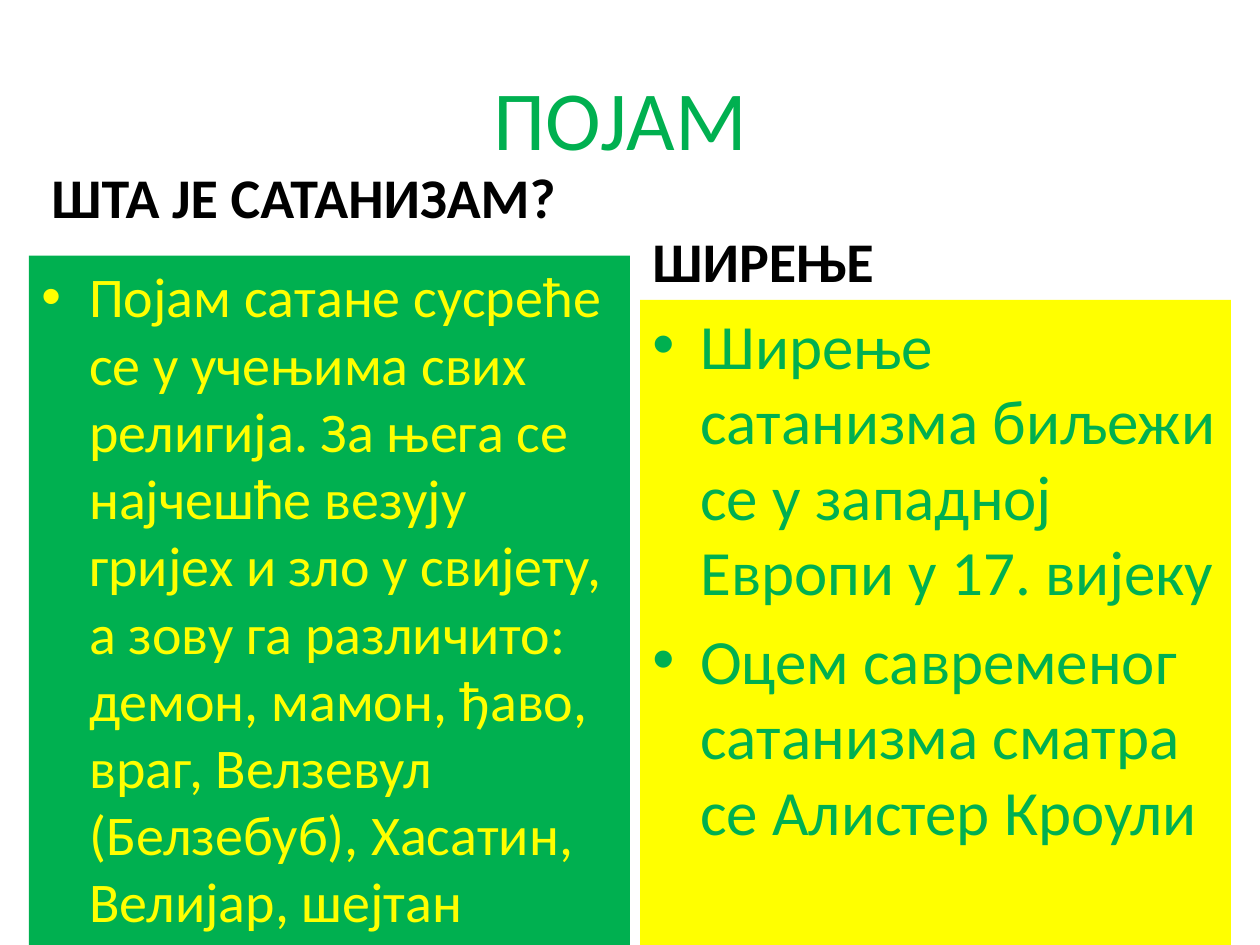
from dataclasses import dataclass
from lxml.etree import SubElement
from pptx import Presentation as Deck
from pptx.dml.color import RGBColor as Color
from pptx.enum.shapes import MSO_SHAPE as Form
from pptx.enum.text import MSO_ANCHOR as Anchor, PP_ALIGN as Align
from pptx.oxml.ns import qn
from pptx.util import Inches, Pt


@dataclass(frozen=True)
class Theme:
    font: str = "Calibri"
    green: str = "00B050"
    gold: str = "FFFF00"
    ink: str = "000000"
    title: int = 48
    body: int = 32
    large: int = 36
    gap: float = 0.2
    indent: float = 0.38


class Page:
    def __init__(self, slide, theme):
        self.slide = slide
        self.theme = theme

    def label(self, frame, lines, size, tint, bold=False, align=Align.LEFT):
        frame.word_wrap = True
        for i, line in enumerate(lines):
            para = frame.add_paragraph() if i else frame.paragraphs[0]
            para.text = line
            para.alignment = align
            para.space_before = Pt(size * self.theme.gap)
            font = para.font
            font.name, font.size, font.bold = self.theme.font, Pt(size), bold
            font.color.rgb = Color.from_string(tint)

    def title(self, text, box):
        frame = self.slide.shapes.add_textbox(*map(Inches, box)).text_frame
        frame.vertical_anchor = Anchor.MIDDLE
        self.label(frame, [text], self.theme.title, self.theme.green, align=Align.CENTER)
        frame.paragraphs[0].space_before = Pt(0)

    def head(self, text, box):
        frame = self.slide.shapes.add_textbox(*map(Inches, box)).text_frame
        frame.vertical_anchor = Anchor.BOTTOM
        self.label(frame, [text], self.theme.body, self.theme.ink, bold=True)

    def panel(self, lines, box, fill, tint, size):
        shape = self.slide.shapes.add_shape(Form.RECTANGLE, *map(Inches, box))
        shape.shadow.inherit = False
        shape.fill.solid()
        shape.fill.fore_color.rgb = Color.from_string(fill)
        shape.line.fill.background()
        frame = shape.text_frame
        frame.vertical_anchor = Anchor.TOP
        self.label(frame, lines, size, tint)
        for para in frame.paragraphs:
            self.bullet(para)

    def bullet(self, para):
        props = para._p.get_or_add_pPr()
        step = Inches(self.theme.indent)
        props.set("marL", str(step))
        props.set("indent", str(-step))
        SubElement(props, qn("a:buFont")).set("typeface", "Arial")
        SubElement(props, qn("a:buChar")).set("char", "•")
        props.append(props.find(qn("a:defRPr")))


def main():
    deck = Deck()
    deck.slide_width, deck.slide_height = Inches(10), Inches(7.5)
    theme = Theme()
    page = Page(deck.slides.add_slide(deck.slide_layouts[6]), theme)

    page.title("ПОЈАМ ", (0.5, 0.3, 9, 1.25))
    page.head("ШТА ЈЕ САТАНИЗАМ?", (0.31, 1.17, 4.61, 0.7))
    page.panel(
        ["Појам сатане сусреће се у учењима свих религија. За њега се најчешће "
         "везују гријех и зло у свијету, а зову га различито: демон, мамон, ђаво, "
         "враг, Велзевул (Белзебуб), Хасатин, Велијар, шејтан"],
        (0.23, 2.03, 4.77, 5.47), theme.green, theme.gold, theme.body)
    page.head("ШИРЕЊЕ", (5.08, 1.68, 4.42, 0.7))
    page.panel(
        ["Ширење сатанизма биљежи се у западној Европи у 17. вијеку",
         "Оцем савременог сатанизма сматра се Алистер Кроули"],
        (5.08, 2.38, 4.69, 5.12), theme.gold, theme.green, theme.large)

    deck.save("out.pptx")


if __name__ == "__main__":
    main()
